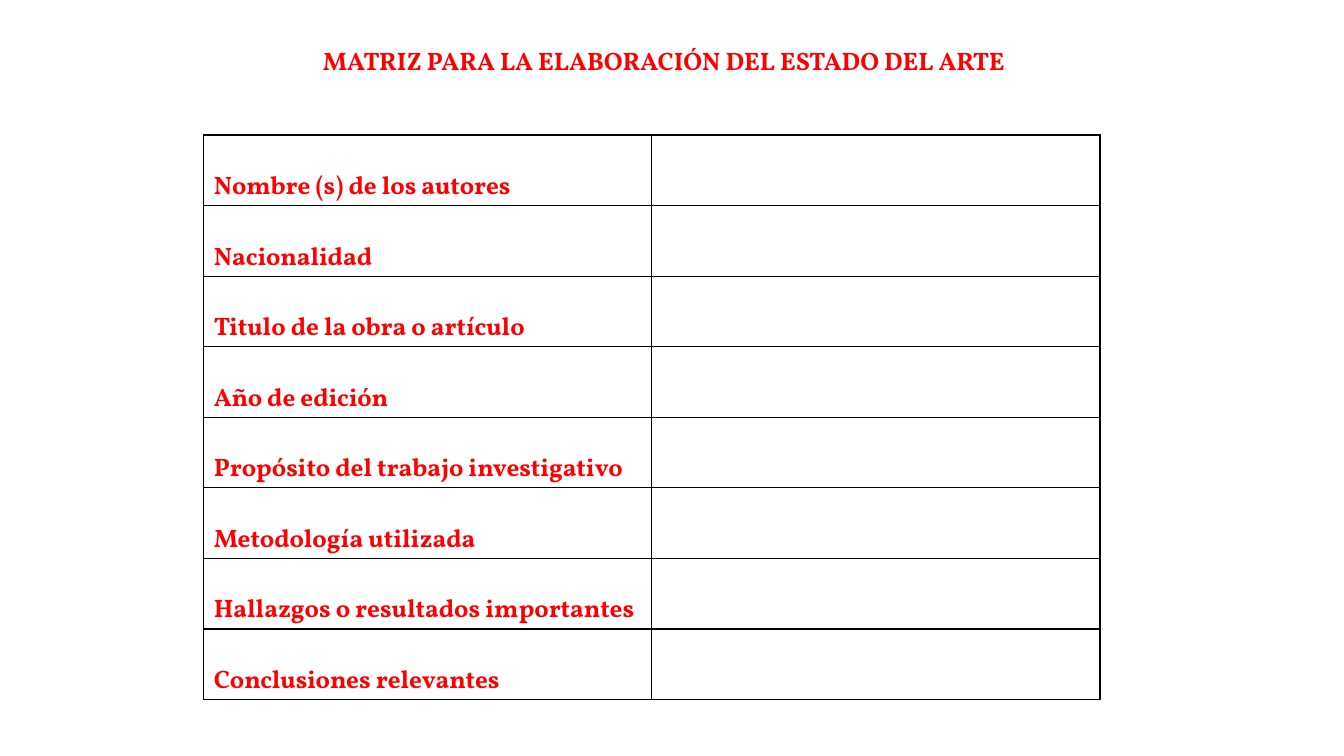
from lxml import etree
from pptx import Presentation
from pptx import util as u
from pptx.dml.color import RGBColor
from pptx.enum import text
from pptx.oxml.ns import qn

FONT = "Vollkorn"
RED, BLACK, WHITE = "FF0000", "000000", "FFFFFF"
TITLE = "MATRIZ PARA LA ELABORACIÓN DEL ESTADO DEL ARTE "
ROW_LABELS = [
    "Nombre (s) de los autores",
    "Nacionalidad",
    "Titulo de la obra o artículo",
    "Año de edición",
    "Propósito del trabajo investigativo",
    "Metodología utilizada",
    "Hallazgos o resultados importantes",
    "Conclusiones relevantes",
]


def color(value):
    return RGBColor.from_string(value)


def style_text(para):
    for span in para.runs:
        span.font.name = FONT
        span.font.size = u.Pt(18)
        span.font.bold = True
        span.font.color.rgb = color(RED)


def add_title(page, left, top, width, height):
    box = page.shapes.add_textbox(*map(u.Inches, (left, top, width, height)))
    box.text_frame.word_wrap = True
    para = box.text_frame.paragraphs[0]
    para.text = TITLE
    para.alignment = text.PP_ALIGN.CENTER
    style_text(para)


def style_cell(cell):
    cell.margin_top = cell.margin_bottom = 0
    cell.vertical_anchor = text.MSO_ANCHOR.BOTTOM
    # Borders come before the fill in the cell properties
    properties = cell._tc.get_or_add_tcPr()
    for side in ("lnL", "lnR", "lnT", "lnB"):
        line = etree.SubElement(properties, qn(f"a:{side}"), w=str(u.Pt(1)))
        fill = etree.SubElement(line, qn("a:solidFill"))
        etree.SubElement(fill, qn("a:srgbClr"), val=BLACK)
    cell.fill.solid()
    cell.fill.fore_color.rgb = color(WHITE)


def add_matrix(page, left, top, width, height):
    frame = page.shapes.add_table(
        len(ROW_LABELS), 2, *map(u.Inches, (left, top, width, height)))
    table = frame.table
    table.first_row = table.horz_banding = False
    for row, label in zip(table.rows, ROW_LABELS):
        for cell in row.cells:
            style_cell(cell)
        para = row.cells[0].text_frame.paragraphs[0]
        para.text = label
        style_text(para)


def main():
    deck = Presentation()
    deck.slide_width, deck.slide_height = u.Inches(13.33), u.Inches(7.5)
    page = deck.slides.add_slide(deck.slide_layouts[6])
    add_title(page, 1.76, 0.4, 9.7, 0.4)
    add_matrix(page, 2.02, 1.34, 8.89, 5.6)
    deck.save("out.pptx")


if __name__ == "__main__":
    main()
